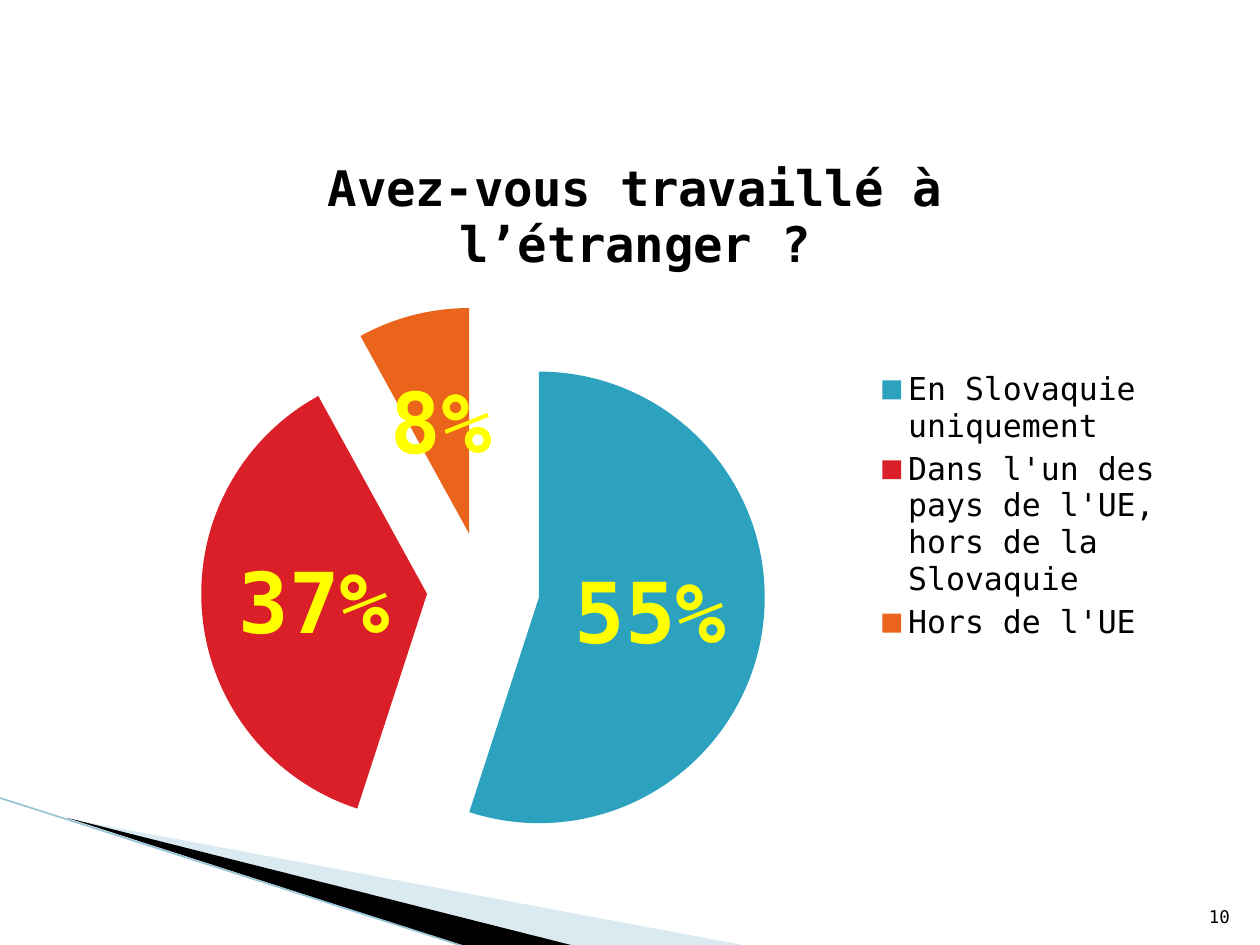
import pptx
import pptx.chart.data
import pptx.dml.color
import pptx.enum.chart
import pptx.enum.shapes
import pptx.enum.text
import pptx.oxml.ns
import pptx.oxml.xmlchemy
import pptx.util

FONT = "DejaVu Sans Mono"
ANSWERS = {
    "En Slovaquie uniquement": (0.55, "2DA2BF"),
    "Dans l'un des pays de l'UE, hors de la Slovaquie": (0.37, "DA1F28"),
    "Hors de l'UE": (0.08, "EB641B"),
}


def color(hex_code):
    return pptx.dml.color.RGBColor.from_string(hex_code)


def inches(*lengths):
    return [pptx.util.Inches(length) for length in lengths]


def new_element(tag, **attributes):
    element = pptx.oxml.xmlchemy.OxmlElement(tag)
    for name, value in attributes.items():
        element.set(name, str(value))
    return element


def set_fill(fill, hex_code):
    fill.solid()
    fill.fore_color.rgb = color(hex_code)


def format_font(font, size, hex_code="000000", bold=False):
    font.name = FONT
    font.size = pptx.util.Pt(size)
    font.bold = bold
    font.color.rgb = color(hex_code)


def add_wedge(page, points, hex_code, opacity=100):
    corners = [inches(*point) for point in points]
    builder = page.shapes.build_freeform(*corners[0])
    builder.add_line_segments(corners[1:], close=True)
    wedge = builder.convert_to_shape()
    wedge.shadow.inherit = False
    wedge.line.fill.background()
    set_fill(wedge.fill, hex_code)
    if opacity < 100:
        tint = wedge.element.spPr.find(".//" + pptx.oxml.ns.qn("a:srgbClr"))
        tint.append(new_element("a:alpha", val=opacity * 1000))


def add_line(page, start, end, hex_code, width):
    edge = page.shapes.add_connector(
        pptx.enum.shapes.MSO_CONNECTOR.STRAIGHT, *inches(*start, *end))
    edge.line.color.rgb = color(hex_code)
    edge.line.width = pptx.util.Pt(width)
    edge.element.spPr.append(new_element("a:effectLst"))


def add_text(page, text, position, size, align, anchor):
    box = page.shapes.add_textbox(*inches(*position))
    box.text_frame.word_wrap = True
    box.text_frame.vertical_anchor = anchor
    para = box.text_frame.paragraphs[0]
    para.alignment = align
    span = para.add_run()
    span.text = text
    format_font(span.font, size)


def add_pie(page, title, answers, position):
    data = pptx.chart.data.CategoryChartData(number_format="0%")
    data.categories = list(answers)
    data.add_series("Series 1", [share for share, _ in answers.values()])
    chart = page.shapes.add_chart(
        pptx.enum.chart.XL_CHART_TYPE.PIE, *inches(*position), data).chart
    format_font(chart.font, 10)

    chart.has_title = True
    chart.chart_title.include_in_layout = False
    span = chart.chart_title.text_frame.paragraphs[0].add_run()
    span.text = title
    format_font(span.font, 28, bold=True)

    chart.has_legend = True
    chart.legend.position = pptx.enum.chart.XL_LEGEND_POSITION.RIGHT
    chart.legend.include_in_layout = False
    format_font(chart.legend.font, 18)

    plot = chart.plots[0]
    plot.vary_by_categories = True
    series = plot.series[0]
    name = series._element.find(pptx.oxml.ns.qn("c:tx"))
    name.addnext(new_element("c:explosion", val=25))
    for index, (_, hex_code) in enumerate(answers.values()):
        set_fill(series.points[index].format.fill, hex_code)

    labels = series.data_labels
    labels.show_value = True
    labels.show_percentage = False
    labels.number_format = "0%"
    labels.number_format_is_linked = False
    labels.position = pptx.enum.chart.XL_LABEL_POSITION.CENTER
    format_font(labels.font, 48, "FFFF00", bold=True)


def main():
    deck = pptx.Presentation()
    deck.slide_width, deck.slide_height = inches(10, 7.5)
    page = deck.slides.add_slide(deck.slide_layouts[6])
    add_wedge(page, [(0.55, 6.5), (5.95, 7.51), (4.56, 7.51)], "A0CBDC", 40)
    add_wedge(page, [(0.53, 6.49), (4.57, 7.51), (3.72, 7.52)], "000000")
    add_line(page, (-0.01, 6.33), (3.71, 7.52), "97C5D8", 0.95)
    add_pie(page, "Avez-vous travaillé à l’étranger ?", ANSWERS,
            (0.75, 0.99, 8.58, 6.06))
    add_text(page, "10", (9.46, 7.01, 0.4, 0.4), 10,
             pptx.enum.text.PP_ALIGN.RIGHT,
             pptx.enum.text.MSO_ANCHOR.BOTTOM)
    deck.save("out.pptx")


if __name__ == "__main__":
    main()
